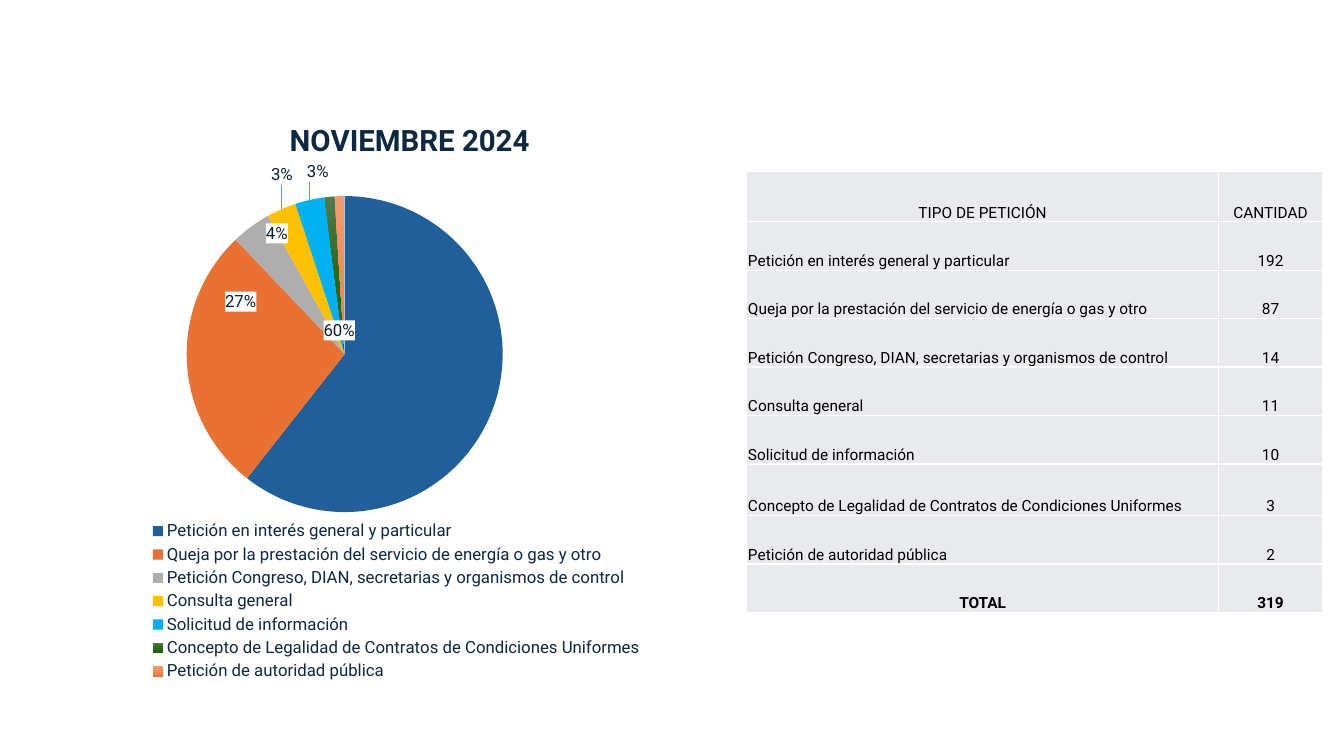
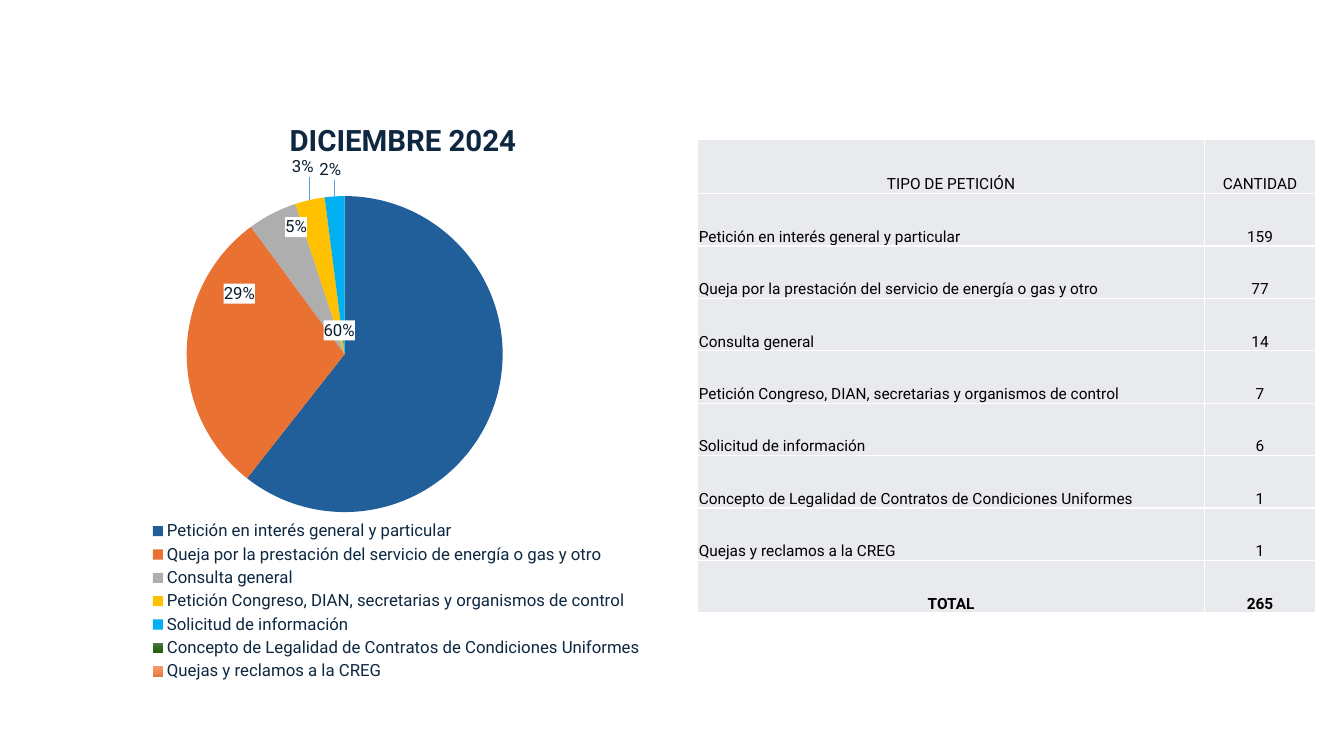
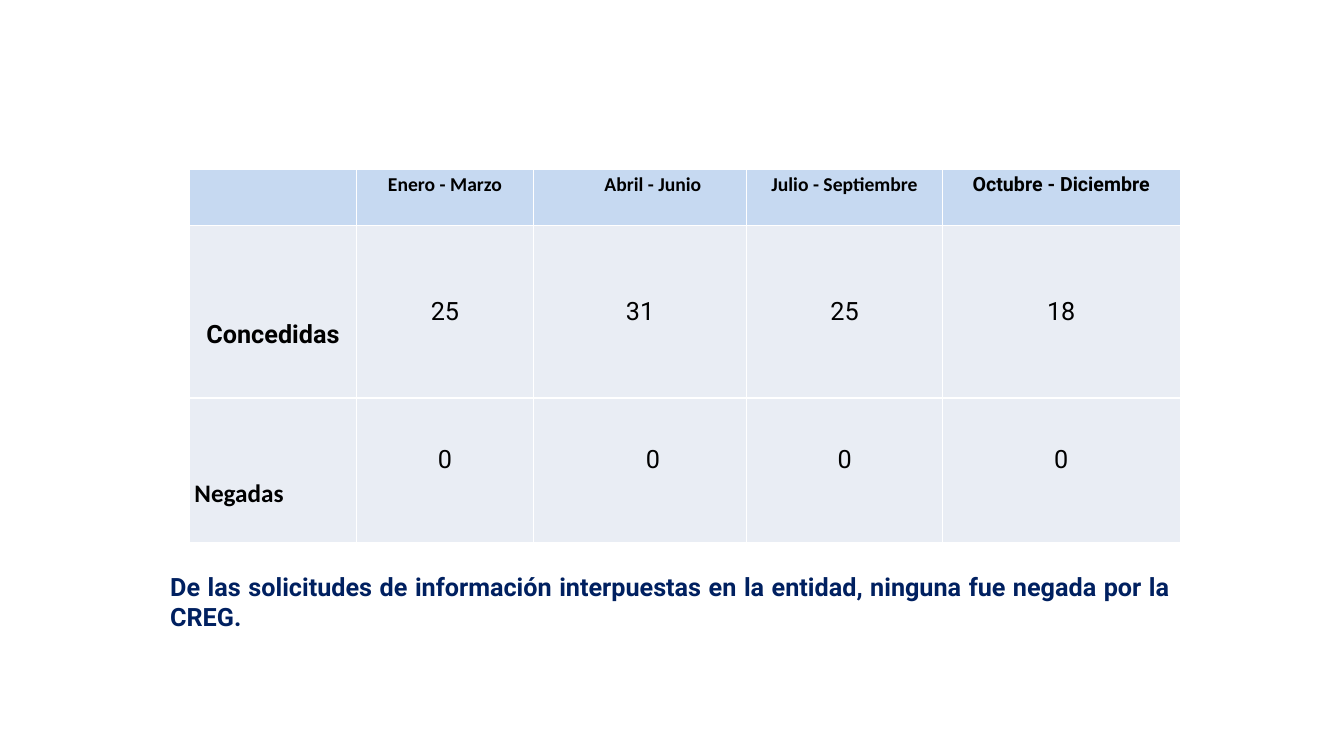
from copy import deepcopy
from math import cos, pi, sin

from pptx import Presentation
from pptx.chart.data import CategoryChartData
from pptx.dml.color import RGBColor
from pptx.enum.chart import XL_CHART_TYPE as CHART, XL_LEGEND_POSITION as LEGEND
from pptx.enum.text import MSO_ANCHOR as ANCHOR, PP_ALIGN as ALIGN
from pptx.oxml import parse_xml
from pptx.oxml.ns import nsdecls, qn
from pptx.util import Cm, Pt

BLACK = RGBColor(0x00, 0x00, 0x00)
INK = RGBColor(0x0E, 0x28, 0x41)
NAVY = RGBColor(0x00, 0x20, 0x60)
GREY = RGBColor(0xE8, 0xEA, 0xED)
HEADER_BLUE = RGBColor(0xC6, 0xD9, 0xF1)
PALE_BLUE = RGBColor(0xE9, 0xED, 0xF4)
SLICES = [
    RGBColor(0x21, 0x5F, 0x9A), RGBColor(0xE9, 0x71, 0x32),
    RGBColor(0xAE, 0xAE, 0xAE), RGBColor(0xFF, 0xC0, 0x00),
    RGBColor(0x00, 0xB0, 0xF0),
]
GRADIENTS = [
    [RGBColor(0x55, 0x78, 0x4E), RGBColor(0x2D, 0x68, 0x18), RGBColor(0x27, 0x5F, 0x12)],
    [RGBColor(0xF1, 0x9B, 0x72), RGBColor(0xF5, 0x8B, 0x54), RGBColor(0xE2, 0x79, 0x42)],
]
FONT = "Roboto"

CHART_X, CHART_Y, CHART_W, CHART_H = 1.8, 2.77, 14.5, 14.48
PIE_X, PIE_Y, PIE_R = 8.7, 8.91, 4.0
LABEL_GAP, LABEL_HALF_H, DIGIT_HALF_W, SIGN_HALF_W = 0.15, 0.25, 0.12, 0.16
AXIS_ZONE = sin(5 * pi / 180)

LABEL_FORMAT = (
    '<c:numFmt formatCode="0&quot;%&quot;" sourceLinked="0"/>'
    '<c:spPr><a:solidFill><a:srgbClr val="FFFFFF"/></a:solidFill></c:spPr>'
    '<c:txPr><a:bodyPr/><a:p><a:pPr><a:defRPr sz="1200">'
    '<a:solidFill><a:srgbClr val="0B1E31"/></a:solidFill>'
    '<a:latin typeface="Roboto"/></a:defRPr></a:pPr></a:p></c:txPr>'
    '<c:dLblPos val="bestFit"/><c:showLegendKey val="0"/><c:showVal val="1"/>'
    '<c:showCatName val="0"/><c:showSerName val="0"/><c:showPercent val="0"/>'
    '<c:showBubbleSize val="0"/>'
)
LEADER_LINES = (
    '<c:showLeaderLines val="1"/><c:leaderLines><c:spPr><a:ln w="9525"><a:solidFill>'
    '<a:srgbClr val="5B9BD5"/></a:solidFill></a:ln></c:spPr></c:leaderLines>'
)

GENERAL = "Petición en interés general y particular"
SERVICE = "Queja por la prestación del servicio de energía o gas y otro"
CONGRESS = "Petición Congreso, DIAN, secretarias y organismos de control"
QUERY = "Consulta general"
INFORMATION = "Solicitud de información"
LEGALITY = "Concepto de Legalidad de Contratos de Condiciones Uniformes"

MONTHS = [
    dict(
        title="NOVIEMBRE 2024",
        rows=[(GENERAL, 192), (SERVICE, 87), (CONGRESS, 14), (QUERY, 11),
              (INFORMATION, 10), (LEGALITY, 3), ("Petición de autoridad pública", 2)],
        shares=[60, 27, 4, 3, 3, 1, 1],
        labels=[(8.59, 8.31), (6.05, 7.58), (6.98, 5.85), (7.11, 4.38), (8.01, 4.31)],
        place=(18.82, 4.32), cols=(11.89, 2.62),
        heights=[1.27, 1.22, 1.22, 1.22, 1.22, 1.22, 1.3, 1.22, 1.22],
    ),
    dict(
        title="DICIEMBRE 2024",
        rows=[(GENERAL, 159), (SERVICE, 77), (QUERY, 14), (CONGRESS, 7),
              (INFORMATION, 6), (LEGALITY, 1), ("Quejas y reclamos a la CREG", 1)],
        shares=[60, 29, 5, 3, 2, 0, 0],
        labels=[(8.59, 8.31), (6.02, 7.38), (7.46, 5.69), (7.64, 4.18), (8.34, 4.26)],
        place=(17.58, 3.51), cols=(12.78, 2.79),
        heights=[1.37] + [1.32] * 8,
    ),
]


def set_layout(parent, index, **values):
    for old in parent.findall(qn("c:layout")):
        parent.remove(old)
    target = '<c:layoutTarget val="inner"/>' if index == 0 else ""
    modes = "".join(f'<c:{k}Mode val="edge"/>' for k in values if k in "xy")
    sizes = "".join(f'<c:{k} val="{v}"/>' for k, v in values.items())
    parent.insert(index, parse_xml(
        f'<c:layout {nsdecls("c")}><c:manualLayout>{target}{modes}{sizes}'
        "</c:manualLayout></c:layout>"))


def fill_cell(cell, text, fill, size, align, anchor, margins, bold=False, font=FONT):
    cell.fill.solid()
    cell.fill.fore_color.rgb = fill
    cell.vertical_anchor = anchor
    cell.margin_left, cell.margin_top, cell.margin_right, cell.margin_bottom = map(Cm, margins)
    tcPr = cell._tc.get_or_add_tcPr()
    for i, side in enumerate(("lnL", "lnR", "lnT", "lnB")):
        tcPr.insert(i, parse_xml(
            f'<a:{side} {nsdecls("a")} w="12700"><a:solidFill>'
            f'<a:srgbClr val="FFFFFF"/></a:solidFill></a:{side}>'))
    if text:
        p = cell.text_frame.paragraphs[0]
        p.alignment = align
        r = p.add_run()
        r.text = text
        r.font.size, r.font.name, r.font.bold = Pt(size), font, bold
        r.font.color.rgb = BLACK


prs = Presentation()
prs.slide_width, prs.slide_height = Cm(33.87), Cm(19.05)
blank = prs.slide_layouts[6]

for month in MONTHS:
    s = prs.slides.add_slide(blank)
    data = CategoryChartData()
    data.categories = [name for name, count in month["rows"]]
    data.add_series("Series 1", month["shares"])
    chart = s.shapes.add_chart(
        CHART.PIE, Cm(CHART_X), Cm(CHART_Y), Cm(CHART_W), Cm(CHART_H), data).chart
    chart.font.name, chart.font.size = FONT, Pt(10)
    chart.font.color.rgb = BLACK

    chart.has_title = True
    r = chart.chart_title.text_frame.paragraphs[0].add_run()
    r.text = month["title"]
    r.font.name, r.font.size, r.font.bold = FONT, Pt(21), True
    r.font.color.rgb = INK
    set_layout(chart.chart_title._element, 1, x=0.37, y=0.01)

    chart.has_legend = True
    legend = chart.legend
    legend.position = LEGEND.RIGHT
    legend.include_in_layout = False
    legend.font.name, legend.font.size = FONT, Pt(12)
    legend.font.color.rgb = INK
    set_layout(legend._element, 1, x=0.13, y=0.71, w=0.87, h=0.29)

    plot = chart.plots[0]
    plot.vary_by_categories = True
    set_layout(plot._element.getparent(), 0, x=0, y=0.15, w=0.95, h=0.55)

    series = plot.series[0]
    for i, color in enumerate(SLICES):
        fill = series.points[i].format.fill
        fill.solid()
        fill.fore_color.rgb = color
    for i, colors in enumerate(GRADIENTS, len(SLICES)):
        fill = series.points[i].format.fill
        fill.gradient()
        fill.gradient_angle = 270
        stops = series._element.findall(".//" + qn("a:gsLst"))[-1]
        stops.insert(1, deepcopy(stops[0]))
        for stop, color, position in zip(fill.gradient_stops, colors, (0, 0.5, 1)):
            stop.color.rgb = color
            stop.position = position

    labels = ""
    total, start = sum(month["shares"]), 0
    for i, (share, (x, y)) in enumerate(zip(month["shares"], month["labels"])):
        angle = 2 * pi * (start + share / 2) / total
        start += share
        across, down = sin(angle), -cos(angle)
        half_w = SIGN_HALF_W + DIGIT_HALF_W * len(str(share))
        base_x = PIE_X + (PIE_R + LABEL_GAP) * across
        base_y = PIE_Y + (PIE_R + LABEL_GAP) * down
        if abs(across) > AXIS_ZONE:
            base_x += half_w if across > 0 else -half_w
        if abs(down) > AXIS_ZONE:
            base_y += LABEL_HALF_H if down > 0 else -LABEL_HALF_H
        dx, dy = (x - base_x) / CHART_W, (y - base_y) / CHART_H
        labels += (
            f'<c:dLbl><c:idx val="{i}"/><c:layout><c:manualLayout><c:x val="{dx:.3f}"/>'
            f'<c:y val="{dy:.3f}"/></c:manualLayout></c:layout>{LABEL_FORMAT}</c:dLbl>')
    for i in range(len(SLICES), len(month["shares"])):
        labels += f'<c:dLbl><c:idx val="{i}"/><c:delete val="1"/></c:dLbl>'
    series._element.find(qn("c:cat")).addprevious(parse_xml(
        f'<c:dLbls {nsdecls("c", "a")}>{labels}{LABEL_FORMAT}{LEADER_LINES}</c:dLbls>'))

    rows = [("TIPO DE PETICIÓN", "CANTIDAD"), *month["rows"],
            ("TOTAL", sum(count for name, count in month["rows"]))]
    left, top = month["place"]
    table = s.shapes.add_table(
        len(rows), 2, Cm(left), Cm(top),
        Cm(sum(month["cols"])), Cm(sum(month["heights"]))).table
    table.first_row = table.horz_banding = False
    for col, width in zip(table.columns, month["cols"]):
        col.width = Cm(width)
    for i, (row, height) in enumerate(zip(rows, month["heights"])):
        table.rows[i].height = Cm(height)
        for j, value in enumerate(row):
            is_name = j == 0 and 0 < i < len(rows) - 1
            fill_cell(table.cell(i, j), str(value), GREY, 11,
                      ALIGN.LEFT if is_name else ALIGN.CENTER, ANCHOR.BOTTOM,
                      (0.03, 0.03, 0.03, 0), bold=i == len(rows) - 1)

s = prs.slides.add_slide(blank)
widths = [4.22, 4.45, 5.38, 4.93, 5.99]
heights = [1.42, 4.34, 3.63]
table = s.shapes.add_table(
    3, 5, Cm(4.77), Cm(4.27), Cm(sum(widths)), Cm(sum(heights))).table
table.first_row = table.horz_banding = False
for col, width in zip(table.columns, widths):
    col.width = Cm(width)
for row, height in zip(table.rows, heights):
    row.height = Cm(height)

quarters = ["", "Enero - Marzo", "Abril - Junio", "Julio - Septiembre", "Octubre - Diciembre"]
for j, text in enumerate(quarters):
    cell = table.cell(0, j)
    fill_cell(cell, text, HEADER_BLUE, 14, ALIGN.CENTER, ANCHOR.TOP,
              (0.78 if j == 2 else 0.13, 0, 0.13, 0), True, FONT if j == 4 else "Calibri")
    cell.text_frame.paragraphs[0].line_spacing = 1.15

answers = [
    ("Concedidas", FONT, ALIGN.CENTER, 1.16, [25, 31, 25, 18], 0, 0.13),
    ("Negadas", "Calibri", ALIGN.LEFT, 1.2, [0, 0, 0, 0], 0.5, 0.78),
]
for i, (name, font, align, drop, counts, lift, indent) in enumerate(answers, 1):
    fill_cell(table.cell(i, 0), name, PALE_BLUE, 18, align, ANCHOR.MIDDLE,
              (0.13, drop, 0.13, 0), True, font)
    for j, count in enumerate(counts, 1):
        fill_cell(table.cell(i, j), str(count), PALE_BLUE, 18, ALIGN.CENTER, ANCHOR.MIDDLE,
                  (indent if j == 2 else 0.13, 0, 0.13, lift))

sp = s.shapes.add_textbox(Cm(4.04), Cm(14.26), Cm(25.7), Cm(1.8))
tf = sp.text_frame
tf.word_wrap = True
p = tf.paragraphs[0]
p.alignment = ALIGN.JUSTIFY
r = p.add_run()
r.text = ("De las solicitudes de información interpuestas en la entidad, "
          "ninguna fue negada por la CREG.")
r.font.name, r.font.size, r.font.bold = FONT, Pt(18), True
r.font.color.rgb = NAVY

prs.save("out.pptx")
